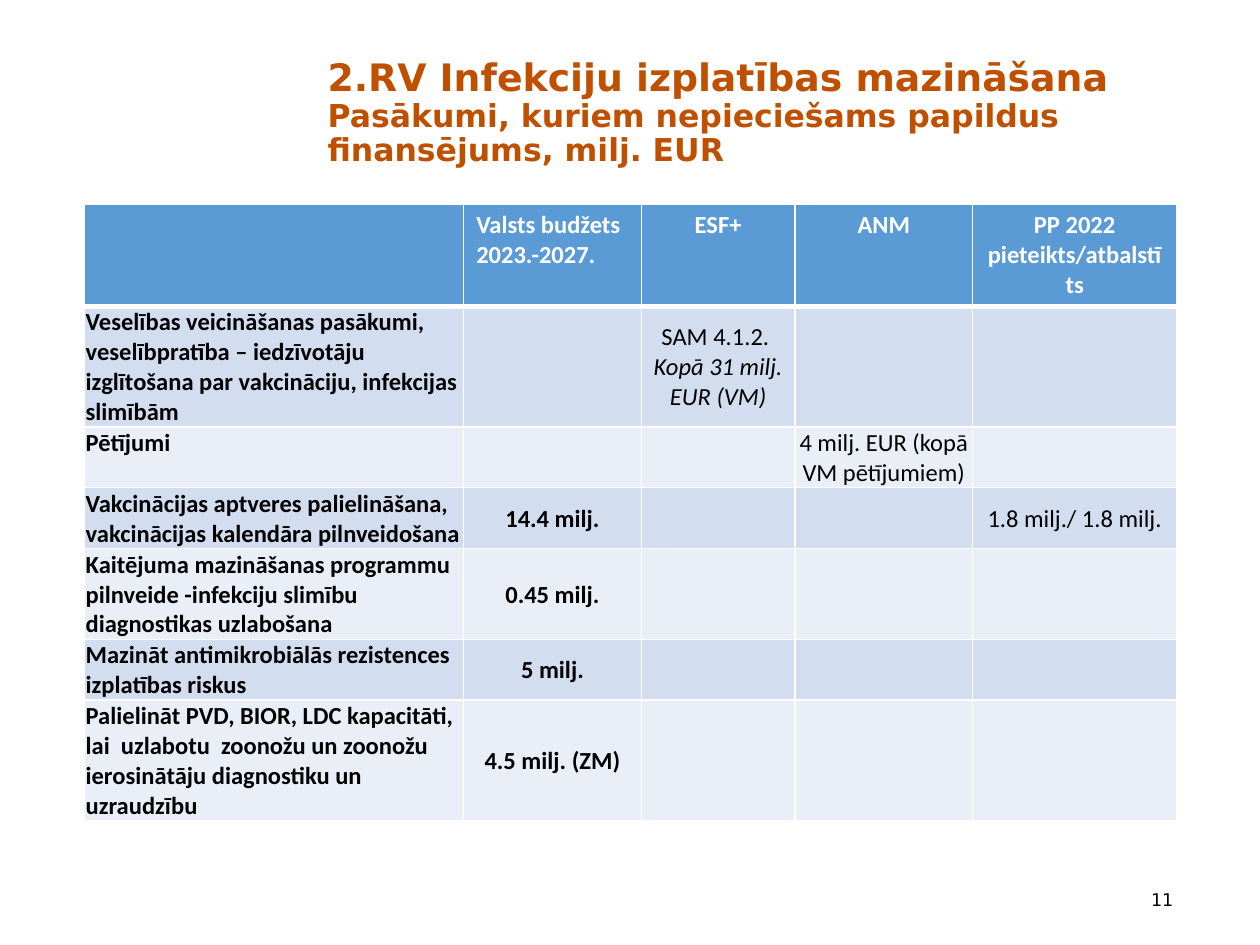
from lxml import etree
from pptx import Presentation
from pptx.dml.color import RGBColor
from pptx.enum.text import MSO_ANCHOR, MSO_AUTO_SIZE, PP_ALIGN
from pptx.oxml.ns import qn
from pptx.util import Inches, Pt

LEFT, CENTER, RIGHT = PP_ALIGN.LEFT, PP_ALIGN.CENTER, PP_ALIGN.RIGHT
TOP, MIDDLE, BOTTOM = MSO_ANCHOR.TOP, MSO_ANCHOR.MIDDLE, MSO_ANCHOR.BOTTOM
WHITE = RGBColor(0xFF, 0xFF, 0xFF)
BLACK = RGBColor(0x00, 0x00, 0x00)
ORANGE = RGBColor(0xBE, 0x50, 0x00)
HEADER_BLUE = RGBColor(0x5B, 0x9B, 0xD5)
BANDS = (RGBColor(0xEA, 0xEF, 0xF7), RGBColor(0xD2, 0xDE, 0xEF))


def set_font(font, name, size, color, bold=False, italic=False):
    font.name, font.size, font.bold, font.italic = name, Pt(size), bold, italic
    font.color.rgb = color


def set_border(cell, side, width):
    line = etree.SubElement(cell._tc.get_or_add_tcPr(), qn(f"a:ln{side}"), w=str(Pt(width)))
    fill = etree.SubElement(line, qn("a:solidFill"))
    etree.SubElement(fill, qn("a:srgbClr"), val=str(WHITE))


prs = Presentation()
prs.slide_width, prs.slide_height = Inches(10), Inches(7.5)
slide = prs.slides.add_slide(prs.slide_layouts[5])

# Title: a large first line and a smaller second part
title = slide.shapes.title
title.left, title.top, title.width, title.height = map(Inches, (2.5, 0.42, 6.92, 1.04))
heading = title.text_frame
heading.word_wrap = True
heading.auto_size = MSO_AUTO_SIZE.NONE
heading.vertical_anchor = TOP
heading_line = heading.paragraphs[0]
heading_line.alignment = LEFT
heading_line.line_spacing = 0.9
topic = heading_line.add_run()
topic.text = "2.RV Infekciju izplatības mazināšana"
set_font(topic.font, "DejaVu Sans", 21.6, ORANGE, bold=True)
heading_line.add_line_break()
subject = heading_line.add_run()
subject.text = "Pasākumi, kuriem nepieciešams papildus finansējums, milj. EUR"
set_font(subject.font, "DejaVu Sans", 18, ORANGE, bold=True)

# Funding table: measure, state budget, ESF+, ANM, PP 2022
funding = [
    ["", "Valsts budžets\n2023.-2027.", "ESF+", "ANM", "PP 2022 pieteikts/atbalstīts"],
    ["Veselības veicināšanas pasākumi, veselībpratība – iedzīvotāju izglītošana par "
     "vakcināciju, infekcijas slimībām", "", "SAM 4.1.2. \nKopā 31 milj. EUR (VM)", "", ""],
    ["Pētījumi", "", "", "4 milj. EUR (kopā VM pētījumiem)", ""],
    ["Vakcinācijas aptveres palielināšana, vakcinācijas kalendāra pilnveidošana",
     "14.4 milj.", "", "", "1.8 milj./ 1.8 milj."],
    ["Kaitējuma mazināšanas programmu pilnveide -infekciju slimību diagnostikas uzlabošana",
     "0.45 milj.", "", "", ""],
    ["Mazināt antimikrobiālās rezistences izplatības riskus", "5 milj.", "", "", ""],
    ["Palielināt PVD, BIOR, LDC kapacitāti, lai  uzlabotu  zoonožu un zoonožu ierosinātāju "
     "diagnostiku un uzraudzību", "4.5 milj. (ZM)", "", "", ""],
]
column_widths = (3.01, 1.41, 1.22, 1.41, 1.62)
row_heights = (0.41, 0.41, 0.41, 0.46, 0.41, 0.41, 0.41)
middle_measures = (3, 4)
MEASURE, BUDGET, ANM = 0, 1, 3

frame = slide.shapes.add_table(len(funding), len(column_widths), Inches(0.67), Inches(1.62),
                               Inches(sum(column_widths)), Inches(sum(row_heights)))
table = frame.table
for column, width in zip(table.columns, column_widths):
    column.width = Inches(width)
for row, height in zip(table.rows, row_heights):
    row.height = Inches(height)
frame.height = Inches(4.82)

for r, entries in enumerate(funding):
    is_header = r == 0
    for c, entry in enumerate(entries):
        cell = table.cell(r, c)
        borders = {"L": 1, "R": 1, "T": 3 if r == 1 else 1, "B": 3 if is_header else 1}
        for side, width in borders.items():
            set_border(cell, side, width)
        cell.fill.solid()
        cell.fill.fore_color.rgb = HEADER_BLUE if is_header else BANDS[r % 2]
        if not entry:
            continue

        if not is_header:
            cell.margin_left = cell.margin_right = cell.margin_top = Inches(0.01)
            cell.margin_bottom = 0
            if c == MEASURE:
                cell.vertical_anchor = MIDDLE if r in middle_measures else TOP
            else:
                cell.vertical_anchor = BOTTOM if c == ANM else MIDDLE
        cell.text = entry
        left_aligned = c == MEASURE or (is_header and c == BUDGET)
        for n, paragraph in enumerate(cell.text_frame.paragraphs):
            paragraph.alignment = LEFT if left_aligned else CENTER
            set_font(paragraph.runs[0].font, "Calibri", 14, WHITE if is_header else BLACK,
                     bold=is_header or c <= BUDGET, italic=not is_header and n == 1)

# Slide number
number_box = slide.shapes.add_textbox(*map(Inches, (8.56, 6.94, 0.85, 0.4)))
number = number_box.text_frame
number.word_wrap = True
number.vertical_anchor = MIDDLE
number.text = "11"
number.paragraphs[0].alignment = RIGHT
set_font(number.paragraphs[0].runs[0].font, "DejaVu Sans", 10, BLACK)

prs.save("out.pptx")
